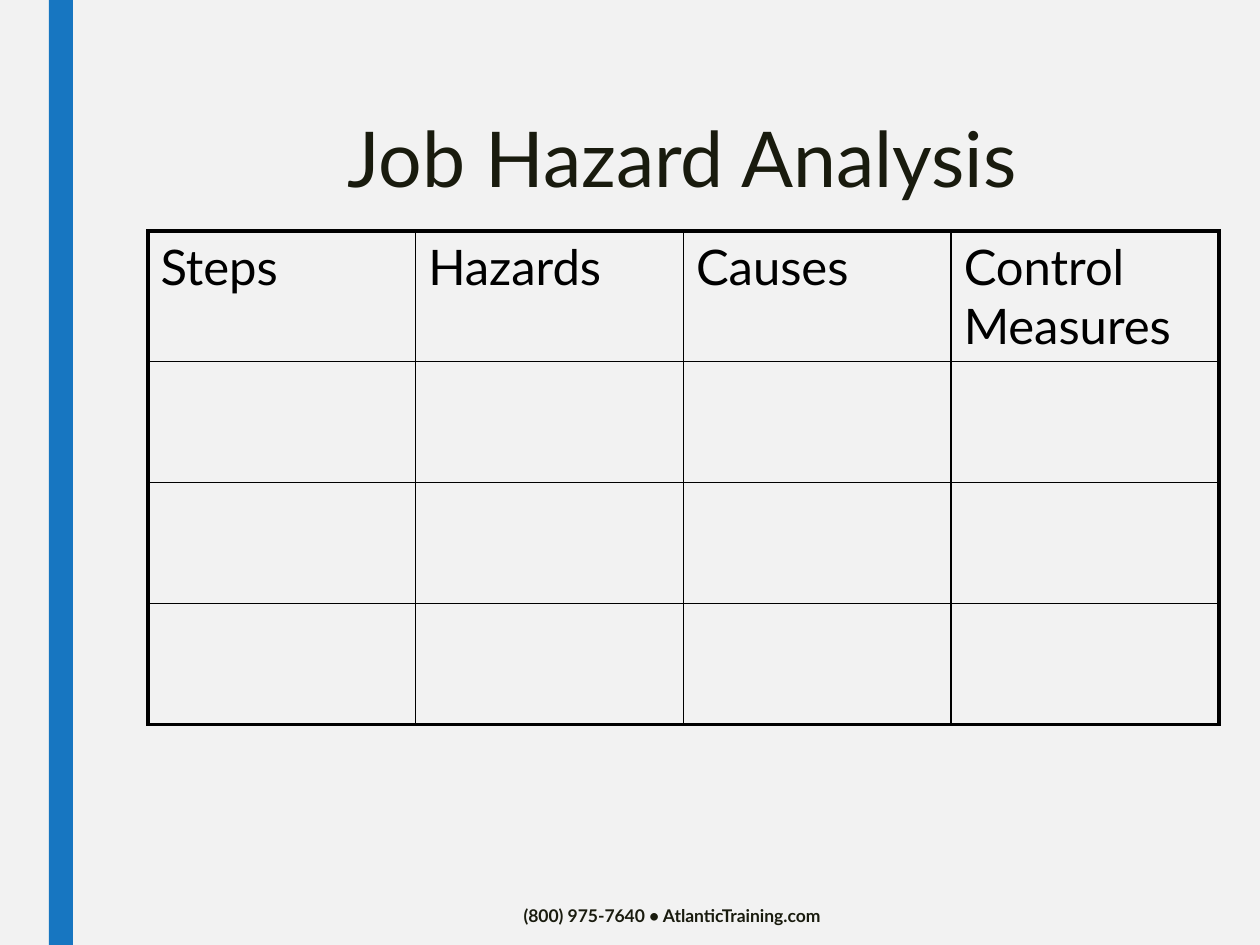
from lxml.etree import SubElement
from pptx import Presentation
from pptx.dml.color import RGBColor
from pptx.enum.shapes import MSO_SHAPE as Shape
from pptx.enum.text import MSO_ANCHOR as Anchor, PP_ALIGN as Align
from pptx.oxml.ns import qn
from pptx.util import Pt

PX = 914400 / 126
FONT = "Lato"
PAPER = RGBColor(0xF2, 0xF2, 0xF2)
BLUE = RGBColor(0x17, 0x76, 0xC1)
INK = RGBColor(0x19, 0x1B, 0x0E)
BLACK = RGBColor(0, 0, 0)
HEADINGS = ["Steps", "Hazards", "Causes", "Control Measures"]
ROW_HEIGHTS = [130, 121, 121, 121]
THIN, THICK = 1, 2.25


def emu(*lengths):
    return [round(length * PX) for length in lengths]


def add_run(paragraph, words, size, color, bold=False):
    run = paragraph.add_run()
    run.text = words
    run.font.name = FONT
    run.font.size = Pt(size)
    run.font.bold = bold
    run.font.color.rgb = color


def add_stripe(slide, box):
    stripe = slide.shapes.add_shape(Shape.RECTANGLE, *emu(*box))
    stripe.shadow.inherit = False
    stripe.fill.solid()
    stripe.fill.fore_color.rgb = BLUE
    stripe.line.fill.background()


def add_centred_line(slide, box, words, size, anchor, bold=False, spacing=None):
    frame = slide.shapes.add_textbox(*emu(*box)).text_frame
    frame.word_wrap = True
    frame.vertical_anchor = anchor
    line = frame.paragraphs[0]
    line.alignment = Align.CENTER
    line.line_spacing = spacing
    add_run(line, words, size, INK, bold)


def set_borders(cell, widths):
    properties = cell._tc.get_or_add_tcPr()
    for side, width in widths.items():
        border = SubElement(properties, qn(f"a:ln{side}"), w=str(Pt(width)))
        fill = SubElement(border, qn("a:solidFill"))
        SubElement(fill, qn("a:srgbClr"), val=str(BLACK))


def add_hazard_table(slide, box):
    rows, columns = len(ROW_HEIGHTS), len(HEADINGS)
    table = slide.shapes.add_table(rows, columns, *emu(*box)).table
    table.first_row = table.horz_banding = False
    for row, height in zip(table.rows, ROW_HEIGHTS):
        row.height = emu(height)[0]
    for r in range(rows):
        for c in range(columns):
            cell = table.cell(r, c)
            outer = {"L": c == 0, "R": c == columns - 1,
                     "T": r == 0, "B": r == rows - 1}
            set_borders(cell, {side: THICK if edge else THIN
                               for side, edge in outer.items()})
            cell.fill.background()
    for c, heading in enumerate(HEADINGS):
        add_run(table.cell(0, c).text_frame.paragraphs[0], heading, 28, BLACK)


def main():
    deck = Presentation()
    deck.slide_width, deck.slide_height = emu(1260, 945)
    slide = deck.slides.add_slide(deck.slide_layouts[6])
    slide.background.fill.solid()
    slide.background.fill.fore_color.rgb = PAPER
    add_stripe(slide, (49, 0, 24, 945))
    add_centred_line(slide, (147, 116, 1071, 158), "Job Hazard Analysis",
                     44, Anchor.TOP, spacing=0.89)
    add_hazard_table(slide, (148, 231, 1071, sum(ROW_HEIGHTS)))
    add_centred_line(slide, (472, 884, 400, 63),
                     "(800) 975-7640 • AtlanticTraining.com",
                     10, Anchor.MIDDLE, bold=True)
    deck.save("out.pptx")


if __name__ == "__main__":
    main()
